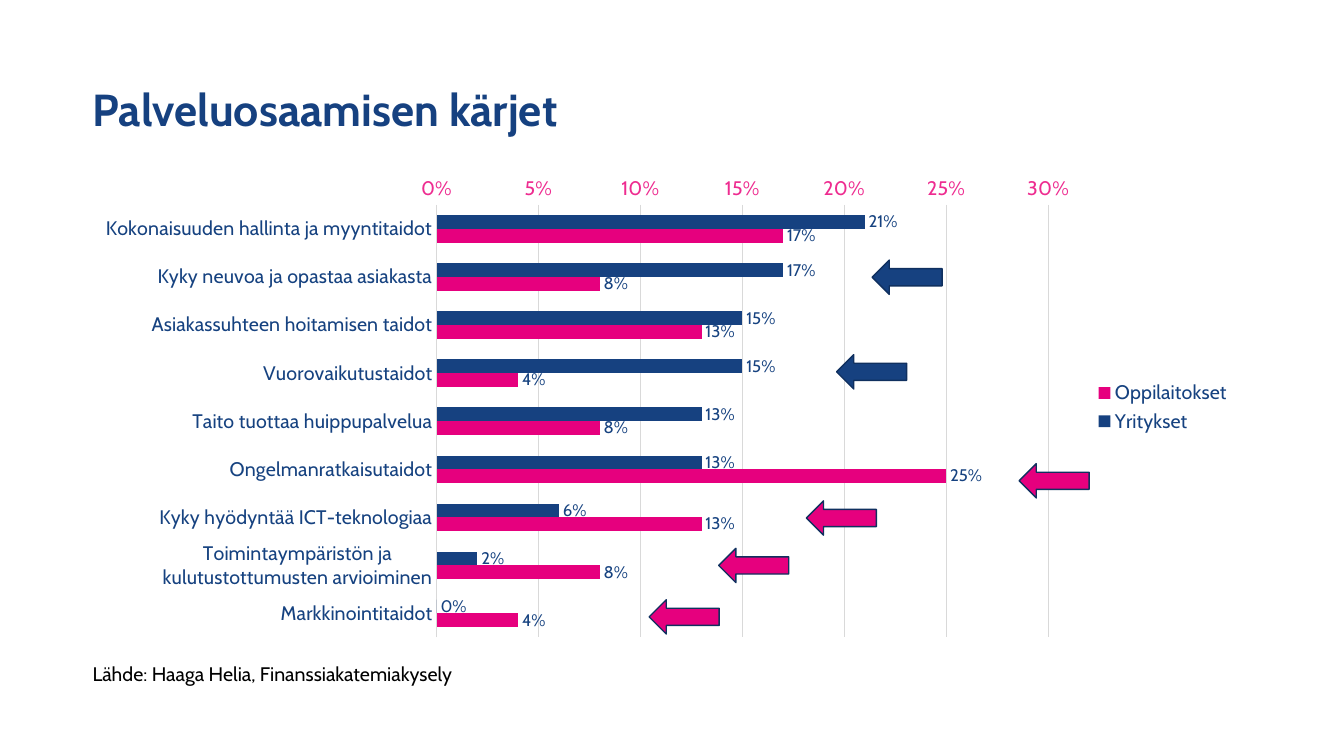
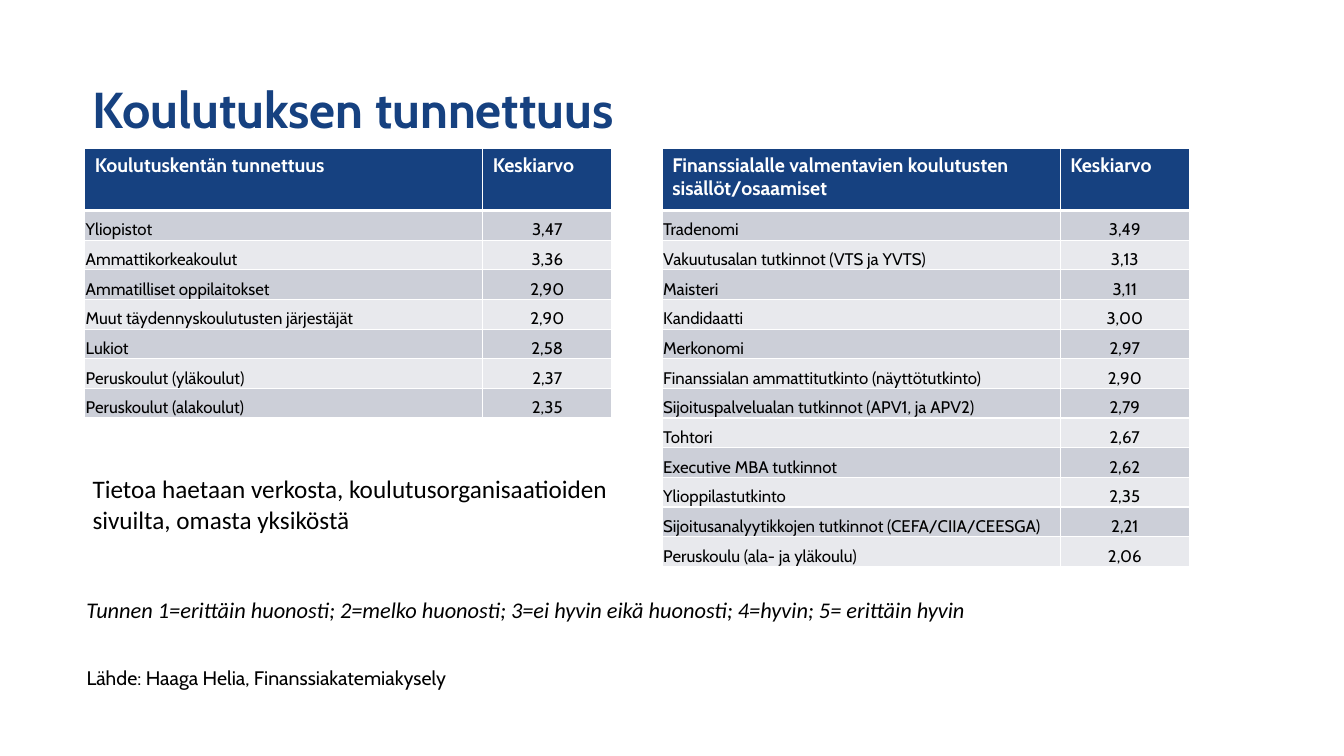
import pptx
import pptx.util
import pptx.dml.color
import pptx.chart.data
import pptx.enum.chart
import pptx.enum.shapes
import pptx.enum.text
import pptx.oxml
import pptx.oxml.ns
import lxml.etree

Pt = pptx.util.Pt
RGB = pptx.dml.color.RGBColor
AXIS = pptx.enum.chart
TEXT = pptx.enum.text

BLUE = RGB(0x16, 0x41, 0x80)
INK = RGB(0x16, 0x42, 0x80)
EDGE = RGB(0x10, 0x30, 0x5F)
PINK = RGB(0xE6, 0x00, 0x7E)
ROSE = RGB(0xEE, 0x2C, 0x90)
GRID = RGB(0xD9, 0xD9, 0xD9)
DARK = RGB(0xCC, 0xCF, 0xD8)
PALE = RGB(0xE8, 0xE9, 0xED)
WHITE = RGB(0xFF, 0xFF, 0xFF)
BLACK = RGB(0x00, 0x00, 0x00)

LABEL = {"name": "Cabin", "size": Pt(14), "color": INK}
SMALL = {**LABEL, "size": Pt(12)}
SCALE = {**LABEL, "color": ROSE}
HEAD = {**LABEL, "color": WHITE, "bold": True}
CELL = {**SMALL, "color": BLACK, "bold": False}
CITE = {**LABEL, "color": BLACK}
NOTE = {"name": "Calibri", "size": Pt(18), "color": BLACK}
KEY = {**NOTE, "size": Pt(16), "italic": True}

SOURCE = "Lähde: Haaga Helia, Finanssiakatemiakysely"

SKILLS = [
    ("Kokonaisuuden hallinta ja myyntitaidot", 0.21, 0.17),
    ("Kyky neuvoa ja opastaa asiakasta", 0.17, 0.08),
    ("Asiakassuhteen hoitamisen taidot", 0.15, 0.13),
    ("Vuorovaikutustaidot", 0.15, 0.04),
    ("Taito tuottaa huippupalvelua", 0.13, 0.08),
    ("Ongelmanratkaisutaidot", 0.13, 0.25),
    ("Kyky hyödyntää ICT-teknologiaa", 0.06, 0.13),
    ("Toimintaympäristön ja kulutustottumusten arvioiminen", 0.02, 0.08),
    ("Markkinointitaidot", 0, 0.04),
]

ARROWS = [
    (623, 185.8, BLUE),
    (597.6, 253.4, BLUE),
    (728, 331.2, PINK),
    (576, 357.8, PINK),
    (513.4, 391.7, PINK),
    (463.7, 428.4, PINK),
]

FIELDS = [
    ("Koulutuskentän tunnettuus", "Keskiarvo"),
    ("Yliopistot", "3,47"),
    ("Ammattikorkeakoulut", "3,36"),
    ("Ammatilliset oppilaitokset", "2,90"),
    ("Muut täydennyskoulutusten järjestäjät", "2,90"),
    ("Lukiot", "2,58"),
    ("Peruskoulut (yläkoulut)", "2,37"),
    ("Peruskoulut (alakoulut)", "2,35"),
]

DEGREES = [
    ("Finanssialalle valmentavien koulutusten sisällöt/osaamiset", "Keskiarvo"),
    ("Tradenomi", "3,49"),
    ("Vakuutusalan tutkinnot (VTS ja YVTS)", "3,13"),
    ("Maisteri", "3,11"),
    ("Kandidaatti", "3,00"),
    ("Merkonomi", "2,97"),
    ("Finanssialan ammattitutkinto (näyttötutkinto)", "2,90"),
    ("Sijoituspalvelualan tutkinnot (APV1, ja APV2)", "2,79"),
    ("Tohtori", "2,67"),
    ("Executive MBA tutkinnot", "2,62"),
    ("Ylioppilastutkinto", "2,35"),
    ("Sijoitusanalyytikkojen tutkinnot (CEFA/CIIA/CEESGA)", "2,21"),
    ("Peruskoulu (ala- ja yläkoulu)", "2,06"),
]


def style(font, form):
    for key, value in form.items():
        if key == "color":
            font.color.rgb = value
        else:
            setattr(font, key, value)


def paint(line, color, width):
    line.color.rgb = color
    line.width = Pt(width)


def place(left, top, width, height):
    return [Pt(left), Pt(top), Pt(width), Pt(height)]


def add_slide(deck, title, size):
    slide = deck.slides.add_slide(deck.slide_layouts[5])
    head = slide.shapes.title
    head.left, head.top, head.width, head.height = place(59, 28, 828, 104.4)
    frame = head.text_frame
    frame.text = title
    frame.auto_size = TEXT.MSO_AUTO_SIZE.NONE
    frame.vertical_anchor = TEXT.MSO_ANCHOR.MIDDLE
    line = frame.paragraphs[0]
    line.alignment = TEXT.PP_ALIGN.LEFT
    line.line_spacing = 0.9
    form = {"name": "Cabin", "size": Pt(size), "bold": True, "color": BLUE}
    style(line.runs[0].font, form)
    return slide


def add_text(slide, box, lines, form, wrap=True, hang=0):
    frame = slide.shapes.add_textbox(*place(*box)).text_frame
    frame.word_wrap = wrap
    frame.auto_size = TEXT.MSO_AUTO_SIZE.SHAPE_TO_FIT_TEXT
    frame.text = "\n".join(lines)
    for line in frame.paragraphs:
        if hang:
            props = line._p.get_or_add_pPr()
            props.set("marL", str(Pt(hang)))
            props.set("indent", str(-Pt(hang)))
        style(line.runs[0].font, form)


def add_source(slide, left, top):
    add_text(slide, (left, top, 314, 24.5), [SOURCE], CITE, wrap=False)


def add_arrow(slide, left, top, color):
    kind = pptx.enum.shapes.MSO_SHAPE.LEFT_ARROW
    arrow = slide.shapes.add_shape(kind, *place(left, top, 50, 24.5))
    arrow.shadow.inherit = False
    arrow.fill.solid()
    arrow.fill.fore_color.rgb = color
    paint(arrow.line, EDGE, 1)


def add_bars(slide):
    names, firms, schools = zip(*SKILLS)
    data = pptx.chart.data.CategoryChartData(number_format="0%")
    data.categories = names
    data.add_series("Yritykset", firms)
    data.add_series("Oppilaitokset", schools)
    kind = AXIS.XL_CHART_TYPE.BAR_CLUSTERED
    chart = slide.shapes.add_chart(kind, *place(59, 119.5, 828, 342.7), data).chart
    style(chart.font, LABEL)
    chart.has_title = False
    chart.has_legend = True
    chart.legend.position = AXIS.XL_LEGEND_POSITION.RIGHT
    chart.legend.include_in_layout = False
    style(chart.legend.font, LABEL)

    for axis, form in ((chart.category_axis, LABEL), (chart.value_axis, SCALE)):
        axis.major_tick_mark = axis.minor_tick_mark = AXIS.XL_TICK_MARK.NONE
        style(axis.tick_labels.font, form)
    chart.category_axis.reverse_order = True
    paint(chart.category_axis.format.line, GRID, 0.75)
    scale = chart.value_axis
    scale.minimum_scale, scale.maximum_scale, scale.major_unit = 0, 0.3, 0.05
    scale.tick_labels.number_format = "0%"
    scale.tick_labels.number_format_is_linked = False
    scale.format.line.fill.background()
    paint(scale.major_gridlines.format.line, GRID, 0.75)

    plot = chart.plots[0]
    plot.gap_width, plot.overlap = 150, 0
    plot.vary_by_categories = False
    for bars, color in zip(plot.series, (BLUE, PINK)):
        bars.format.fill.solid()
        bars.format.fill.fore_color.rgb = color
        bars.invert_if_negative = False
        labels = bars.data_labels
        labels.show_value = True
        labels.number_format = "0%"
        labels.number_format_is_linked = False
        labels.position = AXIS.XL_LABEL_POSITION.OUTSIDE_END
        style(labels.font, SMALL)


def border(cell, row):
    props = cell._tc.get_or_add_tcPr()
    thick = {"T": row == 1, "B": row == 0}
    for side in "LRTB":
        width = Pt(3 if thick.get(side) else 1)
        line = lxml.etree.SubElement(props, pptx.oxml.ns.qn("a:ln" + side), w=str(width))
        fill = lxml.etree.SubElement(line, pptx.oxml.ns.qn("a:solidFill"))
        lxml.etree.SubElement(fill, pptx.oxml.ns.qn("a:srgbClr"), val=str(WHITE))


def fill_cell(cell, text, row, col):
    border(cell, row)
    cell.fill.solid()
    cell.fill.fore_color.rgb = BLUE if row == 0 else DARK if row % 2 else PALE
    cell.text = text
    line = cell.text_frame.paragraphs[0]
    style(line.runs[0].font, CELL if row else HEAD)
    if row:
        cell.vertical_anchor = TEXT.MSO_ANCHOR.BOTTOM
        cell.margin_left = cell.margin_right = cell.margin_top = Pt(0.75)
        cell.margin_bottom = 0
        if col:
            line.alignment = TEXT.PP_ALIGN.CENTER


def add_grid(slide, left, rows):
    high = 44.6 + 21.2 * (len(rows) - 1)
    box = place(left, 105.8, 376.6, high)
    table = slide.shapes.add_table(len(rows), 2, *box).table
    for col, width in zip(table.columns, (284.4, 92.2)):
        col.width = Pt(width)
    for row, texts in enumerate(rows):
        table.rows[row].height = Pt(21.2 if row else 44.6)
        for col, text in enumerate(texts):
            fill_cell(table.cell(row, col), text, row, col)


def main():
    deck = pptx.Presentation()
    deck.slide_width, deck.slide_height = Pt(960), Pt(540)

    slide = add_slide(deck, "Palveluosaamisen kärjet", 32)
    add_bars(slide)
    add_source(slide, 59, 469.4)
    for arrow in ARROWS:
        add_arrow(slide, *arrow)

    slide = add_slide(deck, "Koulutuksen tunnettuus", 36)
    key = "Tunnen 1=erittäin huonosti; 2=melko huonosti; 3=ei hyvin eikä huonosti; 4=hyvin; 5= erittäin hyvin"
    add_text(slide, (54.7, 422, 746.6, 26.6), [key], KEY)
    note = ["Tietoa haetaan verkosta, koulutusorganisaatioiden", "sivuilta, omasta yksiköstä"]
    add_text(slide, (59, 334.8, 399.6, 51), note, NOTE, hang=28)
    add_grid(slide, 473, DEGREES)
    add_source(slide, 54.7, 472.3)
    add_grid(slide, 60.5, FIELDS)

    deck.save("out.pptx")


if __name__ == "__main__":
    main()
